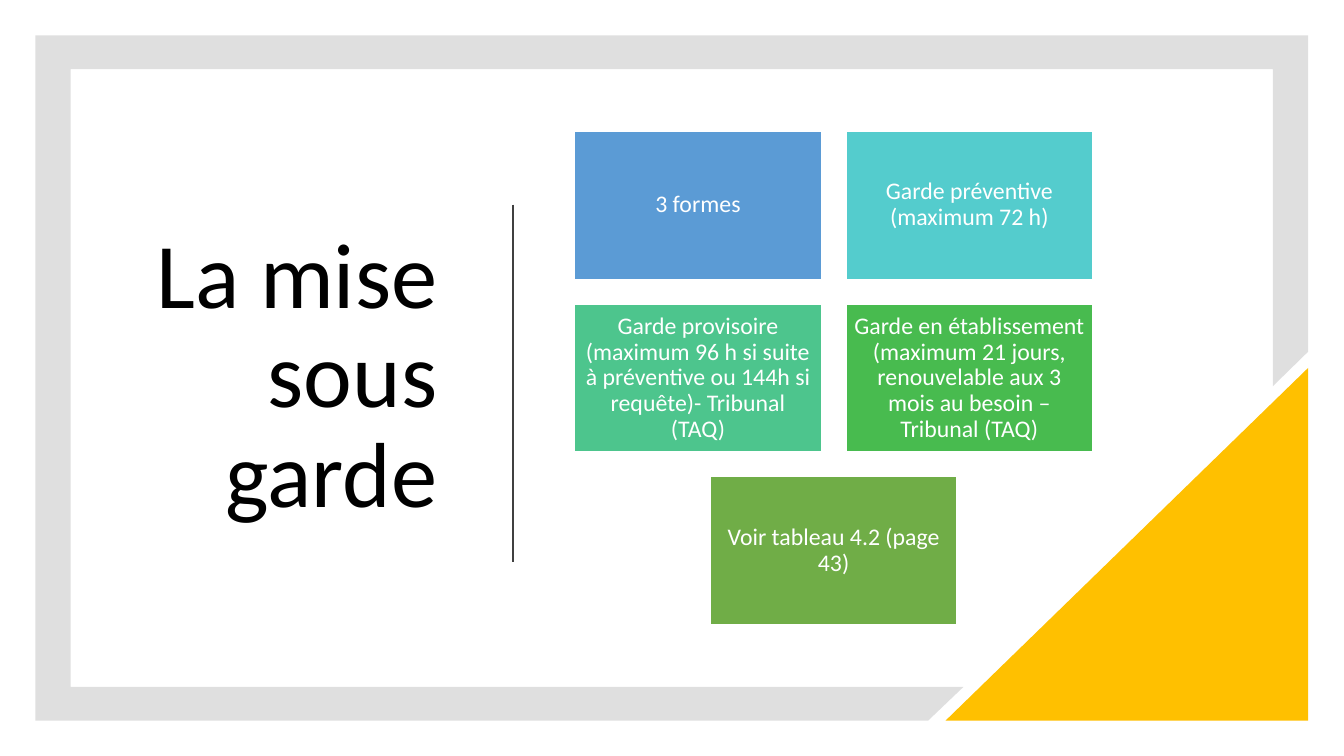
import pptx
import pptx.util
import pptx.dml.color
import pptx.enum.shapes
import pptx.enum.text
import pptx.oxml
import pptx.oxml.ns
import lxml.etree

Cm, Pt = pptx.util.Cm, pptx.util.Pt
Shape = pptx.enum.shapes.MSO_SHAPE
Align = pptx.enum.text.PP_ALIGN
qn = pptx.oxml.ns.qn

CARDS = [
    ("3 formes", "5B9BD5"),
    ("Garde préventive (maximum 72 h)", "54CCCD"),
    ("Garde provisoire (maximum 96 h si suite à préventive ou 144h si requête)- Tribunal (TAQ)", "4DC58D"),
    ("Garde en établissement (maximum 21 jours, renouvelable aux 3 mois au besoin – Tribunal (TAQ)", "48BB4F"),
    ("Voir tableau 4.2 (page 43)", "70AD47"),
]


def paint(form, tint):
    form.solid()
    form.fore_color.rgb = pptx.dml.color.RGBColor.from_string(tint)


def write(shape, text, size, tint, align, pad=(0.25, 0.13)):
    frame = shape.text_frame
    frame.word_wrap = True
    frame.vertical_anchor = pptx.enum.text.MSO_ANCHOR.MIDDLE
    frame.margin_left = frame.margin_right = Cm(pad[0])
    frame.margin_top = frame.margin_bottom = Cm(pad[1])
    para = frame.paragraphs[0]
    para.alignment = align
    para.line_spacing = 0.9
    run = para.add_run()
    run.text = text
    run.font.name = "Calibri"
    run.font.size = Pt(size)
    paint(run.font.fill, tint)


def draw_frame(slide, left, top, width, height):
    right, low = left + width, top + height
    band, rim = 0.89, 0.85
    # Outer edge, then back along the inner edge; the low right corner is cut
    points = [
        (left, top), (right, top), (right, top + 7.97),
        (right - band, top + 8.84), (right - band, top + rim),
        (left + band, top + rim), (left + band, low - rim),
        (left + 23.39, low - rim), (left + 22.5, low),
        (left, low),
    ]
    points = [(Cm(x), Cm(y)) for x, y in points]
    path = slide.shapes.build_freeform(*points[0], scale=1.0)
    path.add_line_segments(points[1:], close=True)
    ring = path.convert_to_shape()
    ring.shadow.inherit = False
    ring.line.fill.background()
    paint(ring.fill, "808080")
    shade = ring.fill._xPr.find(qn("a:solidFill"))[0]
    lxml.etree.SubElement(shade, qn("a:alpha")).set("val", "25000")

    # Yellow corner
    wide, high = 9.14, 8.89
    corner = slide.shapes.add_shape(
        Shape.RIGHT_TRIANGLE, Cm(right - wide), Cm(low - high), Cm(wide), Cm(high))
    corner.shadow.inherit = False
    corner.line.fill.background()
    paint(corner.fill, "FFC000")
    corner._element.spPr.find(qn("a:xfrm")).set("flipH", "1")


def draw_title(slide, left, top, width, height):
    box = slide.shapes.add_textbox(Cm(left), Cm(top), Cm(width), Cm(height))
    write(box, "La mise sous garde", 66, "000000", Align.RIGHT)

    # Upright rule beside the title
    x, inset = Cm(left + width + 1.66), 1.73
    rule = slide.shapes.add_connector(
        pptx.enum.shapes.MSO_CONNECTOR.STRAIGHT,
        x, Cm(top + inset + 0.13), x, Cm(top + height - inset + 0.13))
    paint(rule.line.fill, "404040")
    rule.line.width = Pt(1.5)
    lxml.etree.SubElement(rule._element.spPr, qn("a:effectLst"))


def draw_cards(slide, left, top, width, height, cols=2, gap=0.62):
    rows = -(-len(CARDS) // cols)
    wide = (width - gap * (cols - 1)) / cols
    high = (height - gap * (rows - 1)) / rows
    for i, (text, tint) in enumerate(CARDS):
        row, col = divmod(i, cols)
        # A short last row is centred
        count = min(cols, len(CARDS) - row * cols)
        start = left + (cols - count) * (wide + gap) / 2
        card = slide.shapes.add_shape(
            Shape.RECTANGLE, Cm(start + col * (wide + gap)),
            Cm(top + row * (high + gap)), Cm(wide), Cm(high))
        card.shadow.inherit = False
        paint(card.fill, tint)
        paint(card.line.fill, "FFFFFF")
        card.line.width = Pt(1)
        write(card, text, 17, "FFFFFF", Align.CENTER, pad=(0.18, 0.18))


def main():
    deck = pptx.Presentation()
    deck.slide_width, deck.slide_height = Cm(33.87), Cm(19.05)
    slide = deck.slides.add_slide(deck.slide_layouts[6])
    draw_frame(slide, 0.89, 0.89, 32.08, 17.27)
    draw_title(slide, 2.79, 3.3, 8.48, 12.45)
    draw_cards(slide, 14.48, 3.3, 13.06, 12.45)
    deck.save("out.pptx")


if __name__ == "__main__":
    main()
